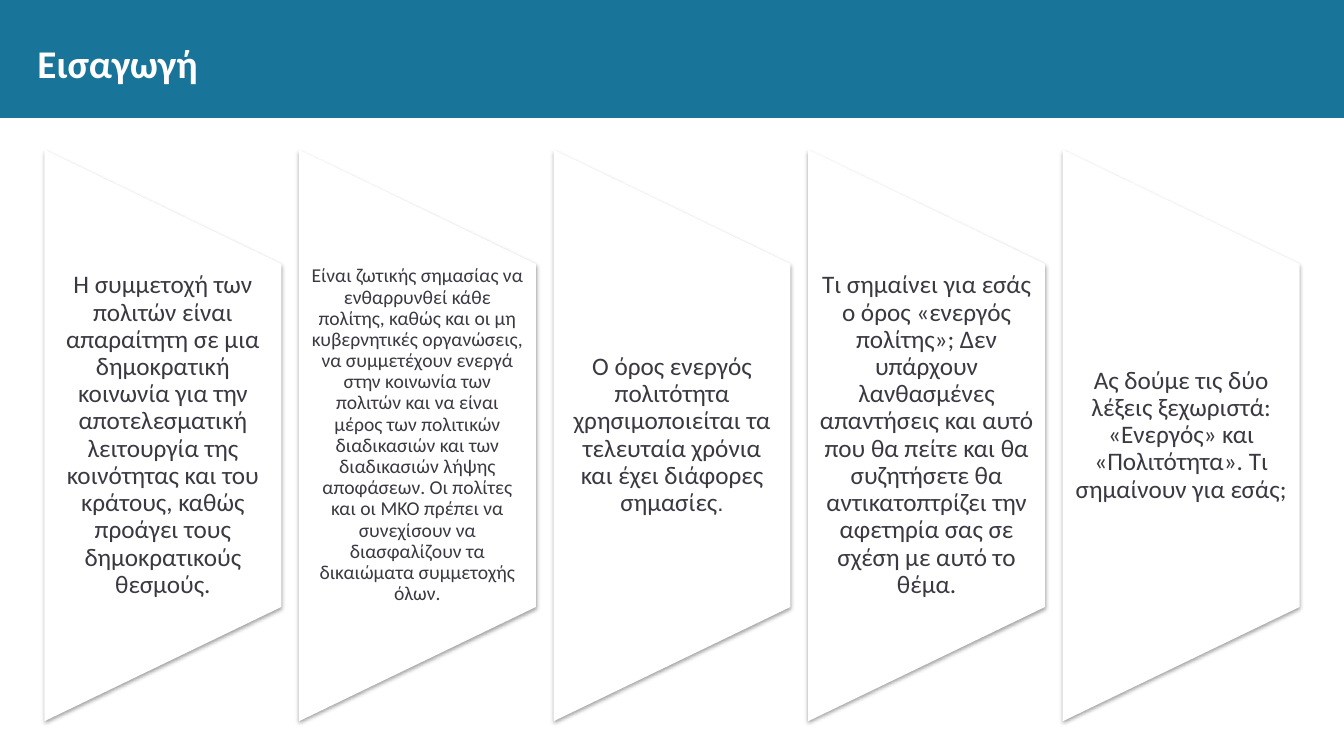
from dataclasses import dataclass

from lxml import etree
from pptx import Presentation
from pptx.dml.color import RGBColor
from pptx.enum.shapes import MSO_SHAPE
from pptx.enum.text import MSO_ANCHOR, PP_ALIGN
from pptx.oxml.ns import qn
from pptx.util import Inches, Pt

RECTANGLE = MSO_SHAPE.RECTANGLE
TRAPEZOID = MSO_SHAPE.FLOWCHART_MANUAL_OPERATION
MIDDLE = MSO_ANCHOR.MIDDLE
LEFT, CENTER = PP_ALIGN.LEFT, PP_ALIGN.CENTER


@dataclass(frozen=True)
class Theme:
    banner: RGBColor = RGBColor.from_string("187498")
    white: RGBColor = RGBColor.from_string("FFFFFF")
    ink: RGBColor = RGBColor.from_string("3B3842")
    shadow: str = "000000"
    font: str = "Calibri"
    stop_font: str = "Arial"
    title_size: int = 28
    body_size: int = 18
    long_body_size: int = 14
    stop_size: int = 16


class SlideBuilder:
    def __init__(self, slide, theme):
        self.slide = slide
        self.theme = theme

    def shape(self, preset, box, fill):
        shape = self.slide.shapes.add_shape(preset, *map(Inches, box))
        shape.shadow.inherit = False
        shape.fill.solid()
        shape.fill.fore_color.rgb = fill
        shape.line.fill.background()
        return shape

    def panel(self, center_x, center_y, width, height):
        """Draw a white trapezoid turned on its side, tall edge on the left."""
        box = (center_x - height / 2, center_y - width / 2, height, width)
        panel = self.shape(TRAPEZOID, box, self.theme.white)
        panel.rotation = 270
        self.drop_shadow(panel)

    def drop_shadow(self, shape):
        effects = shape._element.spPr.find(qn("a:effectLst"))
        shadow = etree.SubElement(
            effects, qn("a:outerShdw"), blurRad=str(Pt(3.1)),
            dist=str(Pt(1.6)), dir="5400000", rotWithShape="0")
        color = etree.SubElement(shadow, qn("a:srgbClr"), val=self.theme.shadow)
        etree.SubElement(color, qn("a:alpha"), val="37000")

    def text(self, box, runs, color, align, bold=False, inset=0, spacing=1.0):
        """Write one paragraph; runs holds (text, font name, size) triples."""
        frame = self.slide.shapes.add_textbox(*map(Inches, box)).text_frame
        frame_format = {
            "word_wrap": True, "vertical_anchor": MIDDLE,
            "margin_left": Inches(inset), "margin_right": Inches(inset),
            "margin_top": 0, "margin_bottom": 0,
        }
        for name, value in frame_format.items():
            setattr(frame, name, value)
        paragraph = frame.paragraphs[0]
        paragraph.alignment = align
        paragraph.line_spacing = spacing
        for words, font, size in runs:
            run = paragraph.add_run()
            run.text = words
            font_format = {"name": font, "size": Pt(size), "bold": bold}
            for name, value in font_format.items():
                setattr(run.font, name, value)
            run.font.color.rgb = color


STATEMENTS = [
    "Η συμμετοχή των πολιτών είναι απαραίτητη σε μια δημοκρατική κοινωνία "
    "για την αποτελεσματική λειτουργία της κοινότητας και του κράτους, καθώς "
    "προάγει τους δημοκρατικούς θεσμούς.",
    "Είναι ζωτικής σημασίας να ενθαρρυνθεί κάθε πολίτης, καθώς και οι μη "
    "κυβερνητικές οργανώσεις, να συμμετέχουν ενεργά στην κοινωνία των πολιτών "
    "και να είναι μέρος των πολιτικών διαδικασιών και των διαδικασιών λήψης "
    "αποφάσεων. Οι πολίτες και οι ΜΚΟ πρέπει να συνεχίσουν να διασφαλίζουν τα "
    "δικαιώματα συμμετοχής όλων.",
    "Ο όρος ενεργός πολιτότητα χρησιμοποιείται τα τελευταία χρόνια και έχει "
    "διάφορες σημασίες",
    "Τι σημαίνει για εσάς ο όρος «ενεργός πολίτης»; Δεν υπάρχουν λανθασμένες "
    "απαντήσεις και αυτό που θα πείτε και θα συζητήσετε θα αντικατοπτρίζει "
    "την αφετηρία σας σε σχέση με αυτό το θέμα.",
    "Ας δούμε τις δύο λέξεις ξεχωριστά: «Ενεργός» και «Πολιτότητα». "
    "Τι σημαίνουν για εσάς;",
]
SMALL_STOP_INDEX = 2  # this statement ends in a smaller full stop
LONG_STATEMENT = 250  # characters beyond which the smaller body size is used

SLIDE_WIDTH, SLIDE_HEIGHT = 13.33, 7.5
PANEL_LEFT, PANEL_WIDTH, PANEL_HEIGHT = 0.44, 2.35, 5.67
PANEL_COUNT = len(STATEMENTS)
LAST_PANEL_LEFT = 10.54
PANEL_STEP = (LAST_PANEL_LEFT - PANEL_LEFT) / (PANEL_COUNT - 1)
PANEL_CENTER_Y = 4.32
STATEMENT_HEIGHT = 3.4


def main():
    presentation = Presentation()
    presentation.slide_width = Inches(SLIDE_WIDTH)
    presentation.slide_height = Inches(SLIDE_HEIGHT)
    theme = Theme()
    slide = presentation.slides.add_slide(presentation.slide_layouts[6])
    builder = SlideBuilder(slide, theme)

    builder.shape(RECTANGLE, (0, 0, SLIDE_WIDTH, 1.17), theme.banner)
    builder.text((0.37, 0.33, 12.59, 0.59),
                 [("Εισαγωγή", theme.font, theme.title_size)],
                 theme.white, LEFT, bold=True)

    for index, statement in enumerate(STATEMENTS):
        left = PANEL_LEFT + index * PANEL_STEP
        builder.panel(left + PANEL_WIDTH / 2, PANEL_CENTER_Y,
                      PANEL_WIDTH, PANEL_HEIGHT)
        is_long = len(statement) > LONG_STATEMENT
        size = theme.long_body_size if is_long else theme.body_size
        runs = [(statement, theme.font, size)]
        if index == SMALL_STOP_INDEX:
            runs.append((".", theme.stop_font, theme.stop_size))
        top = PANEL_CENTER_Y - STATEMENT_HEIGHT / 2
        builder.text((left, top, PANEL_WIDTH, STATEMENT_HEIGHT), runs,
                     theme.ink, CENTER, inset=0.11, spacing=0.9)

    presentation.save("out.pptx")


if __name__ == "__main__":
    main()
